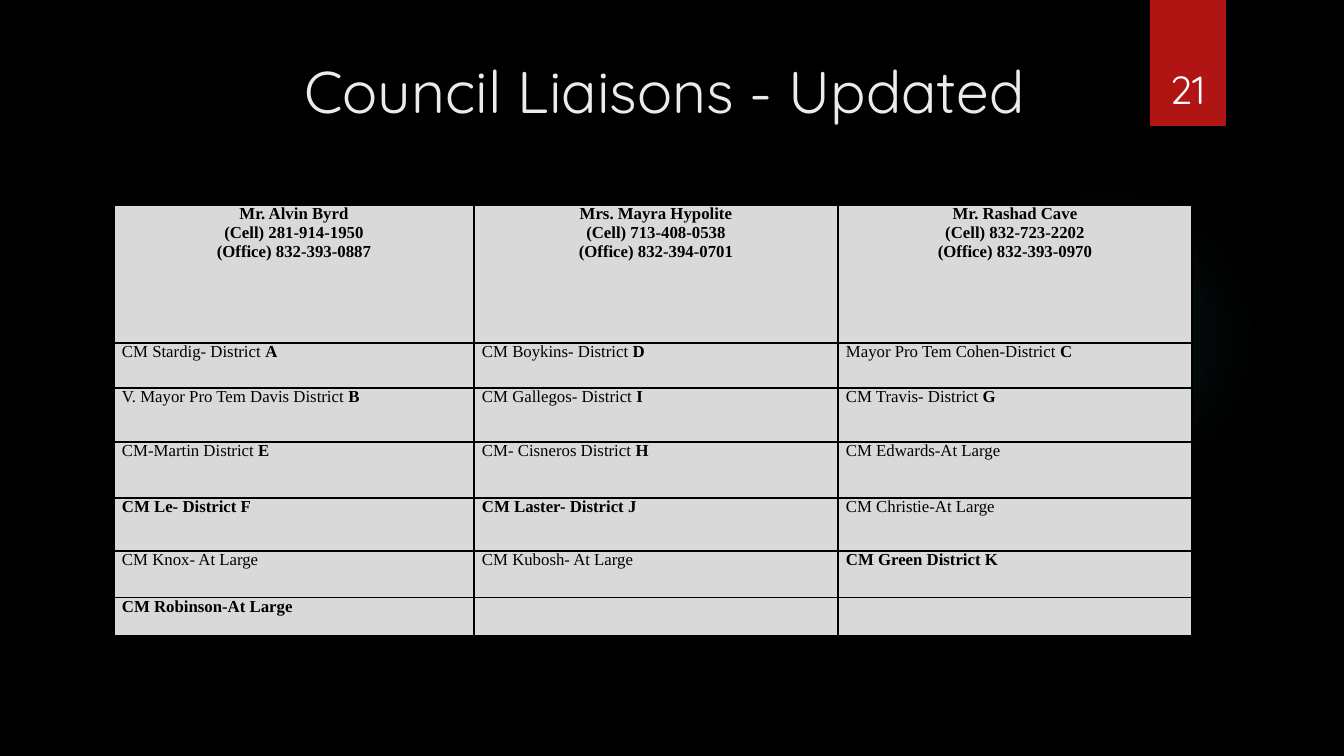
from lxml import etree
from pptx import Presentation
from pptx.dml.color import RGBColor
from pptx.enum.shapes import MSO_SHAPE
from pptx.enum.text import MSO_ANCHOR, PP_ALIGN
from pptx.oxml import parse_xml
from pptx.oxml.ns import nsdecls, qn
from pptx.util import Pt

PX = 914400 / 100.8
RECT, OVAL = MSO_SHAPE.RECTANGLE, MSO_SHAPE.OVAL
TOP, BOTTOM = MSO_ANCHOR.TOP, MSO_ANCHOR.BOTTOM
LEFT, CENTER = PP_ALIGN.LEFT, PP_ALIGN.CENTER

HEADING_FONT, TABLE_FONT = "Quicksand", "Times New Roman"
BLACK, WHITE, OFF_WHITE = "000000", "FFFFFF", "EBEBEB"
RED, GREY, TEAL = "B01513", "D9D9D9", "50B9C1"

COL_WIDTHS = [360, 364, 354]
ROW_HEIGHTS = [138, 45, 54, 56, 53, 47, 38]
LIAISONS = [
    ["Mr. Alvin Byrd", "(Cell) 281-914-1950", "(Office) 832-393-0887"],
    ["Mrs. Mayra Hypolite", "(Cell) 713-408-0538", "(Office) 832-394-0701"],
    ["Mr. Rashad Cave", "(Cell) 832-723-2202", "(Office) 832-393-0970"],
]
# Text after a "*" is bold
MEMBERS = [
    ["CM Stardig- District *A", "CM Boykins- District *D", "Mayor Pro Tem Cohen-District *C"],
    ["V. Mayor Pro Tem Davis District *B", "CM Gallegos- District *I", "CM Travis- District *G"],
    ["CM-Martin District *E", "CM- Cisneros District *H", "CM Edwards-At Large"],
    ["*CM Le- District F", "*CM Laster- District J", "CM Christie-At Large"],
    ["CM Knox- At Large", "CM Kubosh- At Large", "*CM Green District K"],
    ["*CM Robinson-At Large", "", ""],
]


def px(n):
    return round(n * PX)


def rgb(color):
    return RGBColor.from_string(color)


def add_run(p, text, size, font, color, bold=False):
    r = p.add_run()
    r.text = text
    r.font.size, r.font.name, r.font.bold = Pt(size), font, bold
    r.font.color.rgb = rgb(color)


def add_plain_shape(s, kind, x, y, w, h, color):
    sp = s.shapes.add_shape(kind, px(x), px(y), px(w), px(h))
    sp.shadow.inherit = False
    sp.fill.solid()
    sp.fill.fore_color.rgb = rgb(color)
    sp.line.fill.background()
    return sp


def add_glow(s, x, y, size):
    sp = add_plain_shape(s, OVAL, x, y, size, size, TEAL)
    stops = "".join(
        f'<a:gs pos="{pos}000"><a:srgbClr val="{TEAL}"><a:alpha val="{alpha}000"/></a:srgbClr></a:gs>'
        for pos, alpha in [(0, 7), (36, 6), (69, 0), (100, 0)])
    grad = parse_xml(
        f'<a:gradFill {nsdecls("a")} rotWithShape="1"><a:gsLst>{stops}</a:gsLst><a:path path="circle">'
        '<a:fillToRect l="50000" t="50000" r="50000" b="50000"/></a:path></a:gradFill>')
    solid = sp.fill._xPr.find(qn("a:solidFill"))
    solid.getparent().replace(solid, grad)


def add_label(s, x, y, w, h, text, size, color, anchor):
    tf = s.shapes.add_textbox(px(x), px(y), px(w), px(h)).text_frame
    tf.word_wrap = True
    tf.vertical_anchor = anchor
    p = tf.paragraphs[0]
    p.alignment = CENTER
    add_run(p, text, size, HEADING_FONT, color)


def set_borders(cell):
    tcPr = cell._tc.get_or_add_tcPr()
    for i, side in enumerate(["lnL", "lnR", "lnT", "lnB"]):
        ln = etree.Element(qn(f"a:{side}"), w=str(Pt(1)))
        fill = etree.SubElement(ln, qn("a:solidFill"))
        etree.SubElement(fill, qn("a:srgbClr"), val=BLACK)
        tcPr.insert(i, ln)


def fill_cell(cell, lines, align):
    cell.margin_left = cell.margin_right = px(8)
    cell.margin_top = cell.margin_bottom = 0
    cell.fill.solid()
    cell.fill.fore_color.rgb = rgb(GREY)
    set_borders(cell)
    tf = cell.text_frame
    for i, line in enumerate(lines):
        p = tf.add_paragraph() if i else tf.paragraphs[0]
        p.alignment = align
        plain, _, bold = line.partition("*")
        if plain:
            add_run(p, plain, 12, TABLE_FONT, BLACK)
        if bold:
            add_run(p, bold, 12, TABLE_FONT, BLACK, True)


def add_liaison_table(s, x, y):
    table = s.shapes.add_table(
        len(ROW_HEIGHTS), len(COL_WIDTHS), px(x), px(y),
        px(sum(COL_WIDTHS)), px(sum(ROW_HEIGHTS))).table
    table.horz_banding = False
    for col, width in zip(table.columns, COL_WIDTHS):
        col.width = px(width)
    for row, height in zip(table.rows, ROW_HEIGHTS):
        row.height = px(height)
    for c, lines in enumerate(LIAISONS):
        fill_cell(table.cell(0, c), [f"*{line}" for line in lines], CENTER)
    for r, names in enumerate(MEMBERS, 1):
        for c, name in enumerate(names):
            fill_cell(table.cell(r, c), [name], LEFT)


def main():
    prs = Presentation()
    prs.slide_width, prs.slide_height = px(1344), px(756)
    s = prs.slides.add_slide(prs.slide_layouts[6])

    # Background and decoration
    s.background.fill.solid()
    s.background.fill.fore_color.rgb = rgb(BLACK)
    add_glow(s, 949, 184, 310)
    add_plain_shape(s, RECT, 1150, 0, 76, 126, RED)

    # Title, table and slide number
    add_label(s, 146, 50, 1037, 154, "Council Liaisons - Updated", 42, OFF_WHITE, TOP)
    add_liaison_table(s, 114, 205)
    add_label(s, 1141, 32, 93, 85, "21", 28, WHITE, BOTTOM)

    prs.save("out.pptx")


if __name__ == "__main__":
    main()
